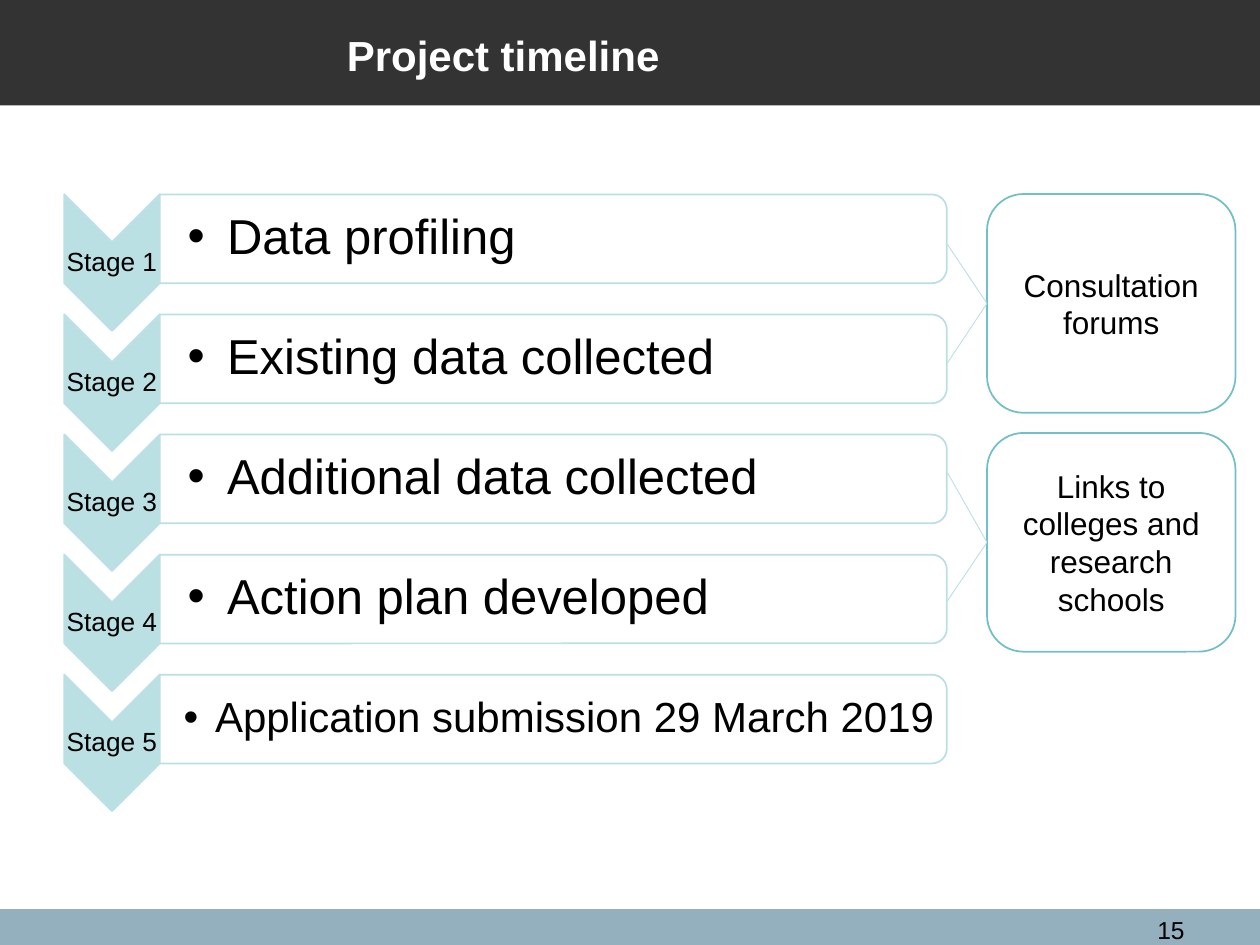
from lxml.etree import SubElement
from pptx import Presentation
from pptx.dml.color import RGBColor
from pptx.enum.shapes import MSO_CONNECTOR as Connector, MSO_SHAPE as Shape
from pptx.enum.text import MSO_ANCHOR as Anchor, PP_ALIGN as Align
from pptx.oxml.ns import qn
from pptx.util import Pt

AQUA, TEAL, WHITE, BLACK = "BBE0E3", "72BFC5", "FFFFFF", "000000"
STEP = 68.6  # distance from one stage to the next
CHEVRON_X, CHEVRON_Y = 64, 150.1
CARD_X, CARD_Y = 316.2, 136.5

# Text, font size, left inset and hanging indent of each stage
STAGES = [
    ("Data profiling", 28, 16, 22.5),
    ("Existing data collected", 28, 16, 22.5),
    ("Additional data collected", 28, 16, 22.5),
    ("Action plan developed", 28, 16, 22.5),
    ("Application submission 29 March 2019", 24, 13.6, 18),
]
# Text, top, and heights at which the two links leave the cards
SIDE_BOXES = [
    ("Consultation forums", 110.9, (139.7, 207.4)),
    ("Links to colleges and research schools", 247.4, (270, 343.4)),
]


def color(hex_string):
    return RGBColor.from_string(hex_string)


def write(shape, text, size, ink=BLACK, align=Align.LEFT, anchor=Anchor.MIDDLE,
          insets=(7.2, 3.6, 7.2, 3.6)):
    frame = shape.text_frame
    frame.word_wrap = True
    frame.vertical_anchor = anchor
    (frame.margin_left, frame.margin_top,
     frame.margin_right, frame.margin_bottom) = map(Pt, insets)
    paragraph = frame.paragraphs[0]
    paragraph.text = text
    paragraph.alignment = align
    paragraph.font.name = "Arial"
    paragraph.font.size = Pt(size)
    paragraph.font.color.rgb = color(ink)
    return paragraph


def add_text(slide, box, *args, **options):
    return write(slide.shapes.add_textbox(*map(Pt, box)), *args, **options)


def add_box(slide, kind, box, fill, line=None):
    shape = slide.shapes.add_shape(kind, *map(Pt, box))
    shape.shadow.inherit = False
    shape.fill.solid()
    shape.fill.fore_color.rgb = color(fill)
    if line:
        shape.line.color.rgb = color(line)
        shape.line.width = Pt(1)
    else:
        shape.line.fill.background()
    return shape


def add_turned(slide, kind, center_x, center_y, width, height, fill):
    """Add a shape turned a quarter clockwise about its centre."""
    box = (center_x - width / 2, center_y - height / 2, width, height)
    shape = add_box(slide, kind, box, fill, AQUA)
    shape.rotation = 90
    return shape


def add_bullet(paragraph, indent):
    properties = paragraph._p.get_or_add_pPr()
    properties.set("marL", str(Pt(indent)))
    properties.set("indent", str(-Pt(indent)))
    SubElement(properties, qn("a:buFont"), typeface="Arial")
    SubElement(properties, qn("a:buChar"), char="•")


def add_stage(slide, index, text, size, inset, indent):
    offset = index * STEP
    # Chevron and its label
    add_turned(slide, Shape.CHEVRON, CHEVRON_X, CHEVRON_Y + offset, 78, 54.6, AQUA)
    label = add_text(slide, (36.7, 138.4 + offset, 54.6, 23.4), f"Stage {index + 1}", 15,
                     align=Align.CENTER, insets=(0.7,) * 4)
    label.line_spacing = 0.9
    # Card and its bullet
    add_turned(slide, Shape.ROUND_2_SAME_RECTANGLE, CARD_X, CARD_Y + offset,
               50.7, 449.7, WHITE)
    bullet = add_text(slide, (91.3, 113.7 + offset, 448, 45.6), text, size,
                      insets=(inset, 1.4, 1.4, 1.4))
    bullet.level = 1
    bullet.line_spacing = 0.9
    add_bullet(bullet, indent)


def add_side_box(slide, text, top, link_starts):
    box = add_box(slide, Shape.ROUNDED_RECTANGLE, (564, top, 142, 125), WHITE, TEAL)
    write(box, text, 18, align=Align.CENTER)
    for start in link_starts:
        link = slide.shapes.add_connector(
            Connector.STRAIGHT, Pt(541.4), Pt(start), Pt(564), Pt(top + 62.5))
        link.end_connect(box, 1)
        link.line.color.rgb = color(AQUA)
        link.line.width = Pt(0.5)
        SubElement(link._element.spPr, qn("a:effectLst"))


def main():
    presentation = Presentation()
    presentation.slide_width, presentation.slide_height = Pt(720), Pt(540)
    slide = presentation.slides.add_slide(presentation.slide_layouts[6])

    # Footer band with the page number, and title band
    add_box(slide, Shape.RECTANGLE, (0, 519.6, 720, 20.4), "94B0BE")
    add_box(slide, Shape.RECTANGLE, (0, 0, 720, 60.2), "333333")
    add_text(slide, (638, 519.6, 46, 17.3), "15", 14, align=Align.RIGHT, anchor=Anchor.TOP)
    title = add_text(slide, (184.3, -13.7, 700, 90), "Project timeline", 24, WHITE,
                     insets=(13.9, 3.6, 7.2, 3.6))
    title.font.bold = True

    # Stages, then the side boxes linked to them
    for index, stage in enumerate(STAGES):
        add_stage(slide, index, *stage)
    for side_box in SIDE_BOXES:
        add_side_box(slide, *side_box)

    presentation.save("out.pptx")


if __name__ == "__main__":
    main()
